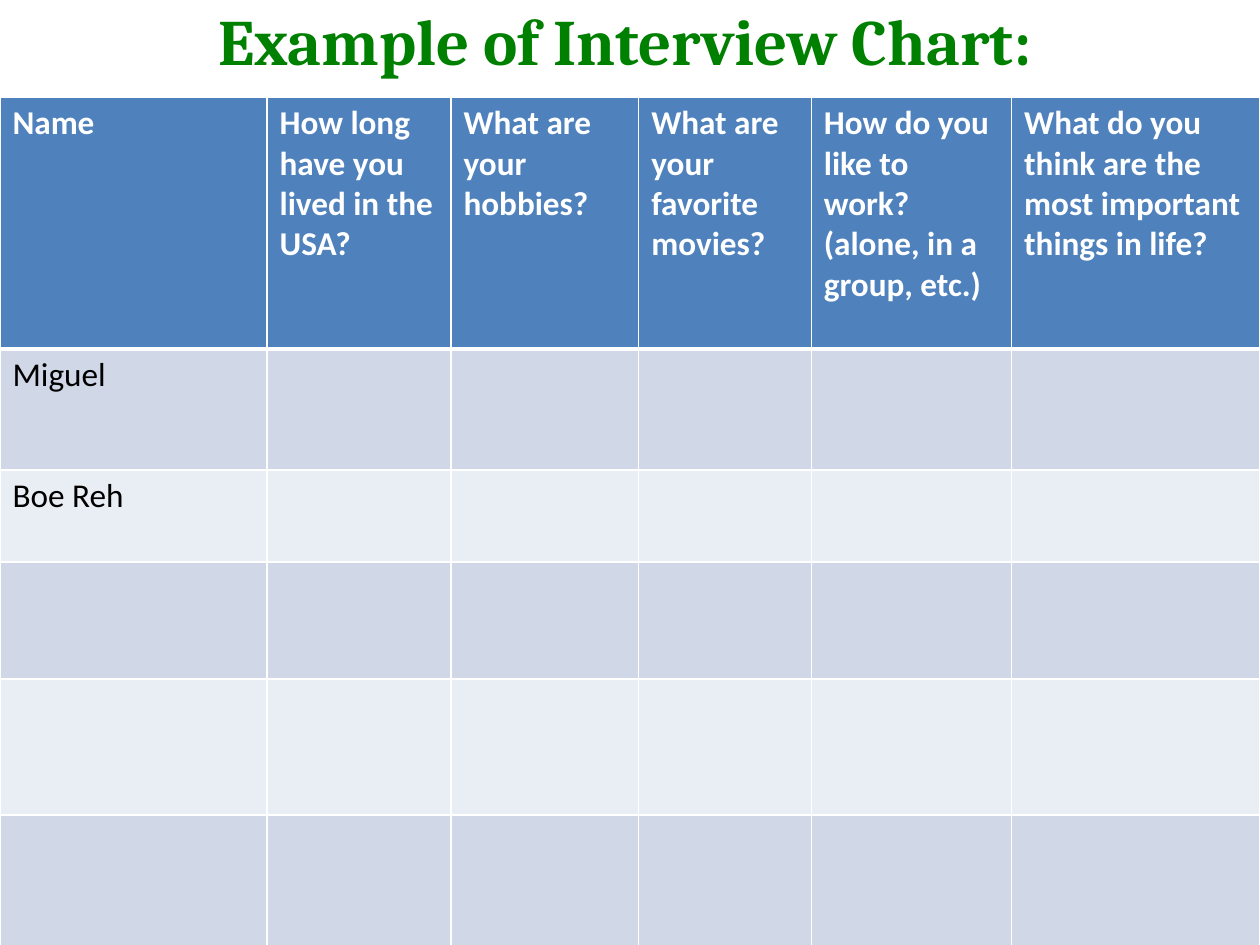
"""Build a slide with a blank interview chart for a classroom."""
from lxml import etree
from pptx import Presentation
from pptx.dml.color import RGBColor
from pptx.enum import text
from pptx.oxml import ns
from pptx.util import Inches, Pt


def style_run(run, font_name, size, color, bold):
    run.font.name = font_name
    run.font.size = Pt(size)
    run.font.bold = bold
    run.font.color.rgb = RGBColor.from_string(color)


def set_borders(cell, color, widths):
    properties = cell._tc.get_or_add_tcPr()
    for position, (side, width) in enumerate(widths.items()):
        line = etree.Element(ns.qn(f"a:ln{side}"), w=str(Pt(width)))
        fill = etree.SubElement(line, ns.qn("a:solidFill"))
        etree.SubElement(fill, ns.qn("a:srgbClr"), val=color)
        properties.insert(position, line)


questions = [
    "Name",
    "How long have you lived in the USA?",
    "What are your hobbies?",
    "What are your favorite movies?",
    "How do you like to work? (alone, in a group, etc.)",
    "What do you think are the most important things in life?",
]
names = ["Miguel", "Boe Reh"]
column_widths = [2.12, 1.46, 1.49, 1.37, 1.59, 1.97]
row_heights = [2, 0.96, 0.73, 0.93, 1.08, 1.49]
header_fill = "4F81BD"
band_fills = ["E9EDF4", "D0D8E8"]

presentation = Presentation()
presentation.slide_width = Inches(10)
presentation.slide_height = Inches(7.5)
slide = presentation.slides.add_slide(presentation.slide_layouts[6])

title = slide.shapes.add_textbox(Inches(0.51), Inches(-0.04), Inches(8.9), Inches(0.72))
title.text_frame.word_wrap = True
title.text_frame.text = "Example of Interview Chart:"
paragraph = title.text_frame.paragraphs[0]
paragraph.alignment = text.PP_ALIGN.CENTER
style_run(paragraph.runs[0], "Cambria", 37, "008000", True)

table = slide.shapes.add_table(
    len(row_heights), len(column_widths), Inches(0), Inches(0.77),
    Inches(sum(column_widths)), Inches(sum(row_heights)),
).table
for column, width in zip(table.columns, column_widths):
    column.width = Inches(width)
for row, height in zip(table.rows, row_heights):
    row.height = Inches(height)

for column_index, question in enumerate(questions):
    table.cell(0, column_index).text_frame.text = question
for row_index, name in enumerate(names, start=1):
    table.cell(row_index, 0).text_frame.text = name

for row_index, row in enumerate(table.rows):
    is_header = row_index == 0
    fill_color = header_fill if is_header else band_fills[row_index % 2]
    text_color = "FFFFFF" if is_header else "000000"
    widths = {"L": 1, "R": 1, "T": 3 if row_index == 1 else 1, "B": 3 if is_header else 1}
    for cell in row.cells:
        cell.fill.solid()
        cell.fill.fore_color.rgb = RGBColor.from_string(fill_color)
        set_borders(cell, "FFFFFF", widths)
        for run in cell.text_frame.paragraphs[0].runs:
            style_run(run, "Calibri", 19, text_color, is_header)

presentation.save("out.pptx")
